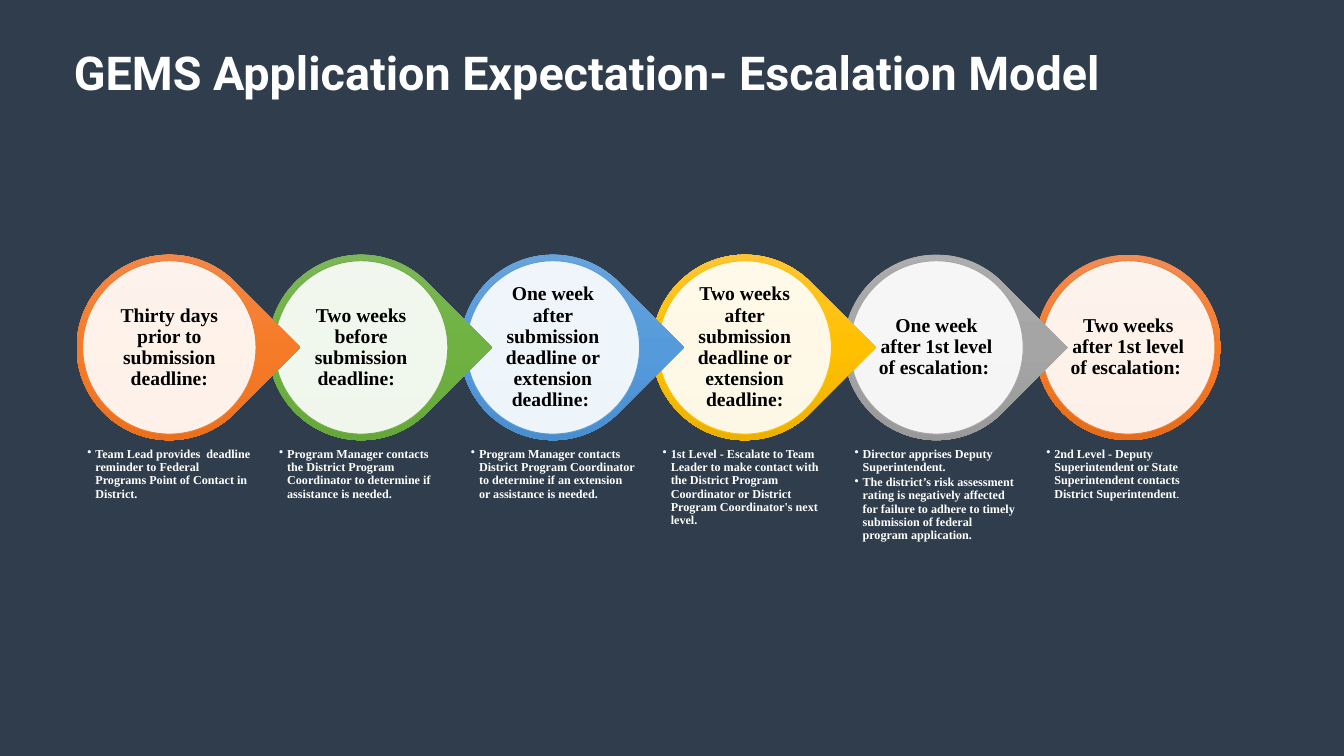
import pptx
import pptx.util
import pptx.oxml
import pptx.oxml.ns
import pptx.dml.color
import pptx.enum.shapes
import pptx.enum.text
from lxml import etree

SHAPE = pptx.enum.shapes.MSO_SHAPE
ALIGN = pptx.enum.text.PP_ALIGN
ANCHOR = pptx.enum.text.MSO_ANCHOR
qn = pptx.oxml.ns.qn

PX = 9144  # 100 px to the inch
SERIF = "Times New Roman"
HEX = {"back": "2F3D4C", "white": "FFFFFF", "black": "000000"}
# Gradient from top to bottom, then the ring line
TONES = {
    "orange": ("F18C57", "F67B28", "E56C19", "ED7D31"),
    "green": ("81B861", "6FB242", "62A336", "70AD47"),
    "blue": ("71A6DB", "559BDB", "448ACA", "5B9BD5"),
    "gold": ("FFC64B", "FFC000", "E3AB00", "FFC000"),
    "gray": ("AFAFAF", "A5A5A5", "939393", "A5A5A5"),
}
# Tone, time limit, actions
STEPS = [
    ("orange", "Thirty days prior to submission deadline:",
     ["Team Lead provides  deadline reminder to Federal Programs Point of "
      "Contact in District."]),
    ("green", "Two weeks before submission deadline:  ",
     ["Program Manager contacts the District Program Coordinator to "
      "determine if assistance is needed."]),
    ("blue", "One week after submission deadline or extension deadline: ",
     ["Program Manager contacts District Program Coordinator to determine "
      "if an extension or assistance is needed."]),
    ("gold", "Two weeks after submission deadline or extension deadline:",
     ["1st Level - Escalate to Team Leader to make contact with the District "
      "Program Coordinator or District Program Coordinator's next level."]),
    ("gray", "One week after 1st level of escalation: ",
     ["Director apprises Deputy Superintendent.",
      "The district’s risk assessment rating is negatively affected for "
      "failure to adhere to timely submission of federal program "
      "application."]),
    ("orange", "Two weeks after 1st level of escalation: ",
     ["2nd Level - Deputy Superintendent or State Superintendent contacts "
      "District Superintendent"]),
]


def emu(*nums):
    return [round(n * PX) for n in nums]


def rgb(code):
    return pptx.dml.color.RGBColor.from_string(code)


def style(para, name, size, color):
    font = para.font
    font.name, font.size, font.bold = name, pptx.util.Pt(size), True
    font.color.rgb = rgb(color)


def shade(shape, codes):
    """Fill with a vertical gradient that stays upright on a turned shape."""
    stops = "".join(
        f'<a:gs pos="{i * 50000}"><a:srgbClr val="{code}"/></a:gs>'
        for i, code in enumerate(codes))
    grad = pptx.oxml.parse_xml(
        f'<a:gradFill {pptx.oxml.ns.nsdecls("a")} rotWithShape="0">'
        f'<a:gsLst>{stops}</a:gsLst><a:lin ang="5400000" scaled="0"/>'
        f'</a:gradFill>')
    shape.element.spPr.find(qn("a:prstGeom")).addnext(grad)


def bullet(para, indent):
    props = para._p.get_or_add_pPr()
    props.set("marL", str(indent * PX))
    props.set("indent", str(-indent * PX))
    etree.SubElement(props, qn("a:buChar")).set("char", "•")


def text_box(slide, box, inset):
    frame = slide.shapes.add_textbox(*emu(*box)).text_frame
    frame.word_wrap = True
    pad = inset * PX
    frame.margin_left = frame.margin_right = pad
    frame.margin_top = frame.margin_bottom = pad
    return frame


def add_title(slide, box):
    title = slide.shapes.title
    title.left, title.top, title.width, title.height = emu(*box)
    frame = title.text_frame
    frame.text = "GEMS Application Expectation- Escalation Model"
    frame.auto_size = pptx.enum.text.MSO_AUTO_SIZE.NONE
    frame.vertical_anchor = ANCHOR.TOP
    para = frame.paragraphs[0]
    para.alignment = ALIGN.LEFT
    style(para, "Roboto", 50, HEX["white"])


def add_step(slide, box, step, last):
    left, top, size, _ = box
    tone, label, notes = step
    *codes, edge = TONES[tone]

    # Outer ring, with a tip toward the next step
    kind = SHAPE.OVAL if last else SHAPE.TEAR
    ring = slide.shapes.add_shape(kind, *emu(left, top, size, size))
    ring.rotation = 0 if last else 45
    ring.shadow.inherit = False
    ring.line.fill.background()
    shade(ring, codes)

    # Pale disc
    rim = 9
    wide = size - 2 * rim
    disc = slide.shapes.add_shape(
        SHAPE.OVAL, *emu(left + rim, top + rim, wide, wide))
    disc.shadow.inherit = False
    disc.fill.solid()
    disc.fill.fore_color.rgb = rgb(HEX["white"])
    tint = disc.element.spPr.find(qn("a:solidFill"))[0]
    etree.SubElement(tint, qn("a:alpha")).set("val", "90000")
    disc.line.color.rgb = rgb(edge)
    disc.line.width = pptx.util.Pt(1)

    # Time limit
    gap = 46
    frame = text_box(
        slide, (left + gap, top + gap, size - 2 * gap, size - 2 * gap), 3)
    frame.vertical_anchor = ANCHOR.MIDDLE
    para = frame.paragraphs[0]
    para.text = label
    para.alignment = ALIGN.CENTER
    para.line_spacing = 0.9
    style(para, SERIF, 21, HEX["black"])

    # Actions
    frame = text_box(slide, (left + rim, top + size + 5, wide, 151), 7)
    for i, note in enumerate(notes):
        para = frame.add_paragraph() if i else frame.paragraphs[0]
        para.text = note
        para.level = 1
        bullet(para, 12)
        para.line_spacing = 0.9
        para.space_after = pptx.util.Pt(2)
        style(para, SERIF, 13, HEX["white"])
    if last:
        stop = para.add_run()
        stop.text = "."
        stop.font.bold = False


def add_chain(slide, box):
    left, top, width, height = box
    size = 276
    end = len(STEPS) - 1
    pitch = (width - size) / end
    # Right to left, so that each tip lies over the next ring
    for i in range(end, -1, -1):
        add_step(slide, (left + i * pitch, top, size, height),
                 STEPS[i], i == end)


def main():
    deck = pptx.Presentation()
    deck.slide_width, deck.slide_height = emu(2000, 1125)
    slide = deck.slides.add_slide(deck.slide_layouts[5])
    slide.background.fill.solid()
    slide.background.fill.fore_color.rgb = rgb(HEX["back"])
    add_title(slide, (100, 60, 1799, 120))
    add_chain(slide, (114, 379, 1703, 432))
    deck.save("out.pptx")


if __name__ == "__main__":
    main()
